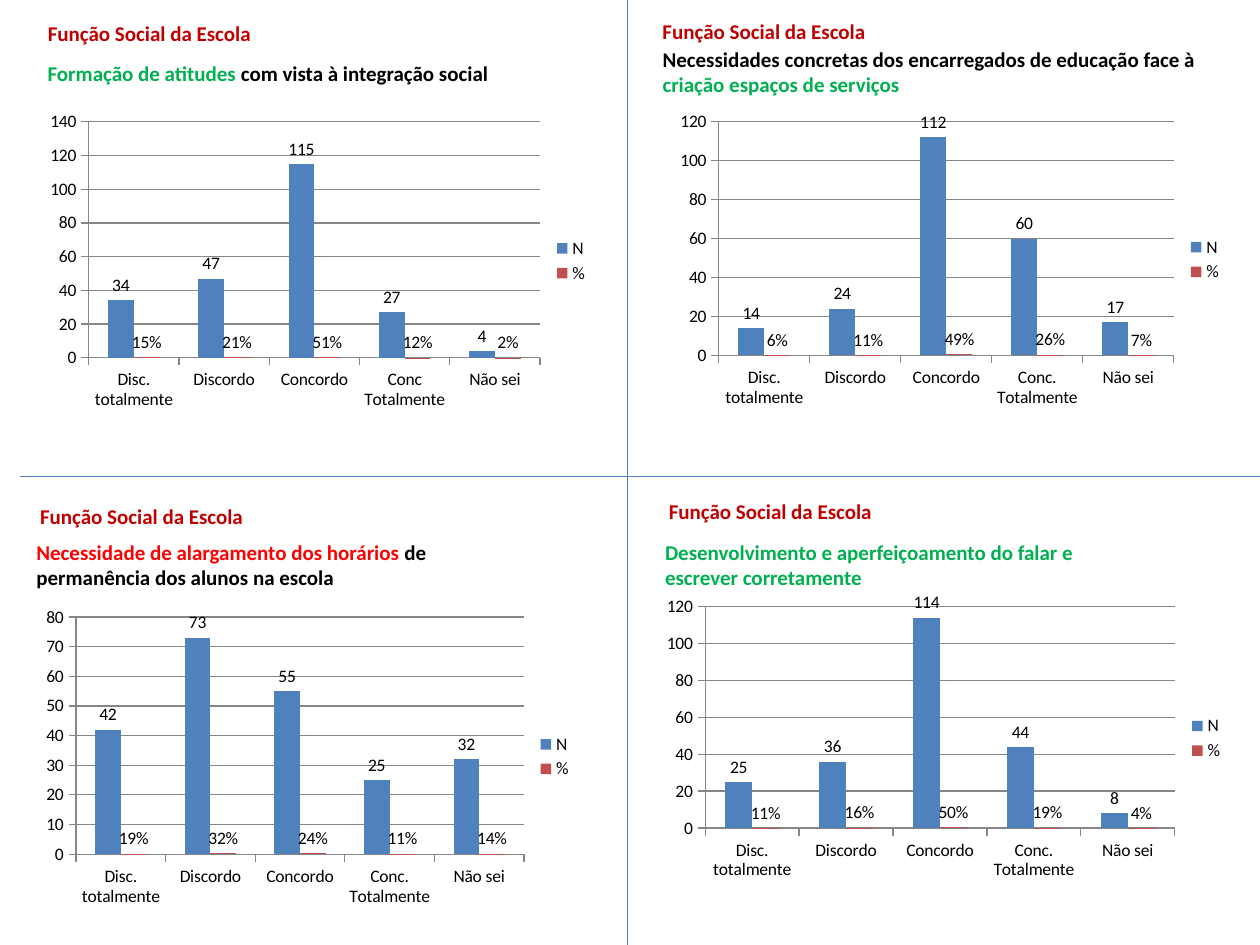
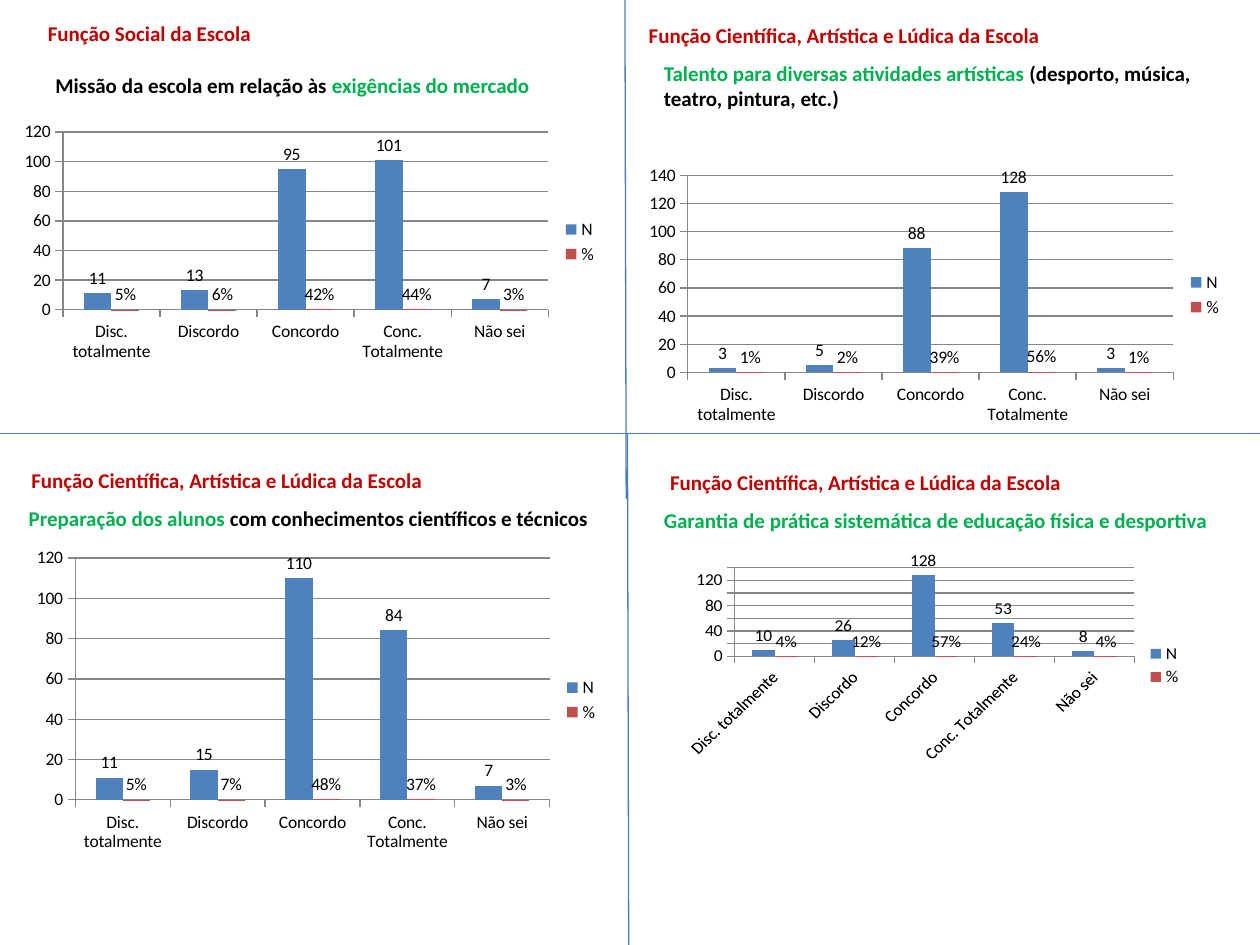
from collections import namedtuple

from lxml import etree
from pptx import Presentation
from pptx.chart.data import CategoryChartData
from pptx.dml.color import RGBColor
from pptx.enum.chart import (XL_CHART_TYPE, XL_LABEL_POSITION,
                             XL_LEGEND_POSITION, XL_TICK_MARK)
from pptx.enum.shapes import MSO_CONNECTOR
from pptx.enum.text import MSO_ANCHOR, MSO_AUTO_SIZE, PP_ALIGN
from pptx.oxml.ns import qn
from pptx.util import Inches, Pt

# Shared look
FONT = "Calibri"
BLACK, DARK_RED, RED, GREEN = "000000", "C00000", "FF0000", "00B050"
RULE, GRID = "4B7EBC", "868686"
SERIES_COLORS = ("4F81BD", "C0504D")

SOCIAL = "Função Social da Escola"
SCIENTIFIC = "Função Científica, Artística e Lúdica da Escola"
CATEGORIES = ("Disc. totalmente", "Discordo", "Concordo",
              "Conc. Totalmente", "Não sei")

# One quadrant of a slide; boxes are (left, top, width, height) in inches
Panel = namedtuple(
    "Panel", "heading heading_box topic topic_box chart_box counts percents categories",
    defaults=(CATEGORIES,))

SOCIAL_PANELS = [
    Panel(SOCIAL, (0.28, 0.11, 4.33, 0.3),
          [("Formação de atitudes ", GREEN), ("com vista à integração social", BLACK)],
          (0.28, 0.43, 5, 0.3), (0.31, 0.84, 4.46, 2.46),
          (34, 47, 115, 27, 4), (15, 21, 51, 12, 2),
          ("Disc. totalmente", "Discordo", "Concordo", "Conc Totalmente", "Não sei")),
    Panel(SOCIAL, (5.16, 0.1, 4.33, 0.3),
          [("Necessidades concretas dos encarregados de educação face à ", BLACK),
           ("criação espaços de serviços", GREEN)],
          (5.16, 0.32, 4.65, 0.5), (5.31, 0.84, 4.49, 2.44),
          (14, 24, 112, 60, 17), (6, 11, 49, 26, 7)),
    Panel(SOCIAL, (0.22, 3.95, 4.33, 0.3),
          [("Necessidade de alargamento dos horários ", RED),
           ("de permanência dos alunos na escola", BLACK)],
          (0.19, 4.23, 4.12, 0.5), (0.28, 4.77, 4.36, 2.47),
          (42, 73, 55, 25, 32), (19, 32, 24, 11, 14)),
    Panel(SOCIAL, (5.21, 3.91, 4.33, 0.3),
          [("Desenvolvimento e aperfeiçoamento do falar e escrever corretamente", GREEN)],
          (5.18, 4.23, 3.46, 0.5), (5.2, 4.69, 4.61, 2.34),
          (25, 36, 114, 44, 8), (11, 16, 50, 19, 4)),
]
SOCIAL_RULES = [(4.98, 0, 4.98, 7.5), (0.16, 3.78, 10, 3.78)]

SCIENTIFIC_PANELS = [
    Panel(SOCIAL, (0.28, 0.11, 4.33, 0.3),
          [("Missão da escola em relação às ", BLACK), ("exigências do mercado", GREEN)],
          (0.34, 0.53, 4.25, 0.3), (0.1, 0.93, 4.74, 1.98),
          (11, 13, 95, 101, 7), (5, 6, 42, 44, 3)),
    Panel(SCIENTIFIC, (5.05, 0.13, 3.35, 0.3),
          [("Talento para diversas atividades artísticas ", GREEN),
           ("(desporto, música, teatro, pintura, etc.)", BLACK)],
          (5.17, 0.43, 4.75, 0.5), (5.06, 1.27, 4.74, 2.14),
          (3, 5, 88, 128, 3), (1, 2, 39, 56, 1)),
    Panel(SCIENTIFIC, (0.15, 3.66, 3.35, 0.3),
          [("Preparação dos alunos ", GREEN),
           ("com conhecimentos científicos e técnicos", BLACK)],
          (0.13, 3.96, 4.87, 0.3), (0.2, 4.3, 4.65, 2.51),
          (11, 15, 110, 84, 7), (5, 7, 48, 37, 3)),
    Panel(SCIENTIFIC, (5.22, 3.68, 3.35, 0.3),
          [("Garantia de prática sistemática de educação física e desportiva", GREEN)],
          (5.17, 3.98, 5, 0.3), (5.37, 4.38, 4.11, 1.71),
          (10, 26, 128, 53, 8), (4, 12, 57, 24, 4)),
]
SCIENTIFIC_RULES = [(4.96, 0, 4.97, 3.96), (4.98, 3.44, 4.99, 7.5), (0, 3.44, 10, 3.44)]


def rgb(color):
    return RGBColor.from_string(color)


def inches(box):
    return [Inches(v) for v in box]


def write_text(sp, runs):
    """Fill a text shape with one bold line made of (text, colour) runs."""
    tf = sp.text_frame
    tf.word_wrap = True
    tf.auto_size = MSO_AUTO_SIZE.NONE
    tf.vertical_anchor = MSO_ANCHOR.TOP
    p = tf.paragraphs[0]
    p.alignment = PP_ALIGN.LEFT
    p.font.name, p.font.size, p.font.bold = FONT, Pt(12), True
    for text, color in runs:
        r = p.add_run()
        r.text = text
        r.font.color.rgb = rgb(color)


def add_rule(s, ends):
    line = s.shapes.add_connector(MSO_CONNECTOR.STRAIGHT, *inches(ends))
    line.line.color.rgb = rgb(RULE)
    line.line.width = Pt(0.75)
    etree.SubElement(line._element.spPr, qn("a:effectLst"))


def style_axis(axis):
    axis.major_tick_mark = XL_TICK_MARK.OUTSIDE
    axis.minor_tick_mark = XL_TICK_MARK.NONE
    axis.format.line.color.rgb = rgb(GRID)
    axis.format.line.width = Pt(0.75)


def add_answer_chart(s, panel):
    data = CategoryChartData()
    data.categories = panel.categories
    data.add_series("N", panel.counts)
    data.add_series("%", [v / 100 for v in panel.percents], number_format="0%")
    chart = s.shapes.add_chart(XL_CHART_TYPE.COLUMN_CLUSTERED,
                               *inches(panel.chart_box), data).chart
    chart.has_title = False
    chart.font.name, chart.font.size = FONT, Pt(10)
    chart.font.color.rgb = rgb(BLACK)

    # Legend and axes
    chart.has_legend = True
    chart.legend.position = XL_LEGEND_POSITION.RIGHT
    chart.legend.include_in_layout = False
    style_axis(chart.category_axis)
    style_axis(chart.value_axis)
    chart.value_axis.has_major_gridlines = True
    grid = chart.value_axis.major_gridlines.format.line
    grid.color.rgb = rgb(GRID)
    grid.width = Pt(0.75)

    # Columns and their labels
    plot = chart.plots[0]
    plot.gap_width = 150
    plot.vary_by_categories = False
    for series, color, fmt in zip(plot.series, SERIES_COLORS, ("General", "0%")):
        series.format.fill.solid()
        series.format.fill.fore_color.rgb = rgb(color)
        labels = series.data_labels
        labels.show_value = True
        labels.position = XL_LABEL_POSITION.OUTSIDE_END
        labels.number_format = fmt
        labels.number_format_is_linked = False


def add_panel(s, panel, heading):
    heading.left, heading.top, heading.width, heading.height = inches(panel.heading_box)
    write_text(heading, [(panel.heading, DARK_RED)])
    write_text(s.shapes.add_textbox(*inches(panel.topic_box)), panel.topic)
    add_answer_chart(s, panel)


def add_quadrant_slide(prs, panels, rules):
    s = prs.slides.add_slide(prs.slide_layouts[5])
    for ends in rules:
        add_rule(s, ends)
    # The first heading is the slide title
    for i, panel in enumerate(panels):
        heading = s.shapes.add_textbox(*inches(panel.heading_box)) if i else s.shapes.title
        add_panel(s, panel, heading)


def main():
    prs = Presentation()
    prs.slide_width, prs.slide_height = Inches(10), Inches(7.5)
    add_quadrant_slide(prs, SOCIAL_PANELS, SOCIAL_RULES)
    add_quadrant_slide(prs, SCIENTIFIC_PANELS, SCIENTIFIC_RULES)
    prs.save("out.pptx")


if __name__ == "__main__":
    main()
